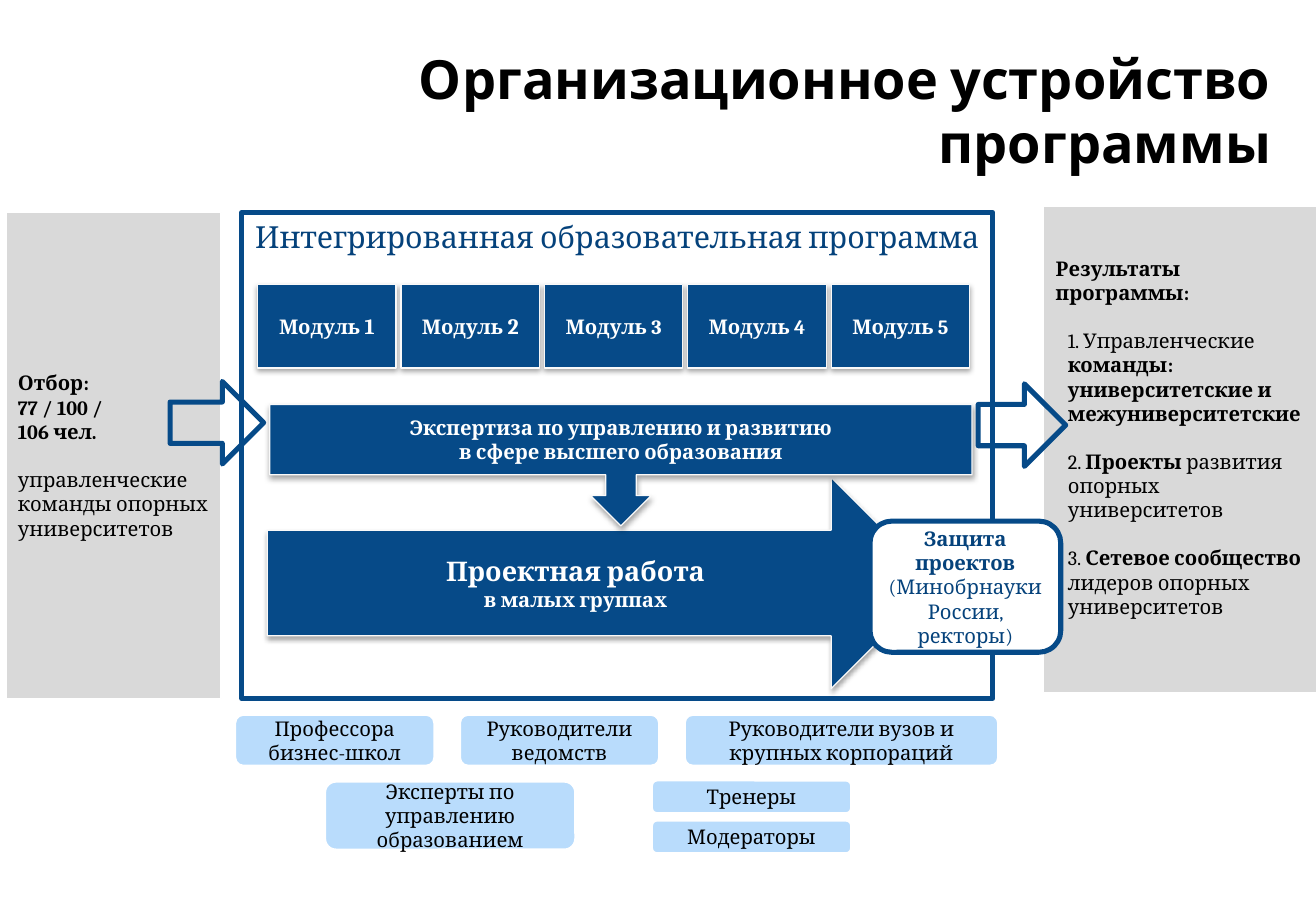
from dataclasses import dataclass

from lxml import etree
from pptx import Presentation
from pptx import util as u
from pptx.dml import color
from pptx.enum import shapes, text
from pptx.oxml import ns

PX = 9144


@dataclass(frozen=True)
class Theme:
    navy: str = "064A88"
    ink: str = "05427B"
    black: str = "000000"
    white: str = "FFFFFF"
    edge: str = "F9F9F9"
    grey: str = "D9D9D9"
    sky: str = "B9DCFC"
    heading_font: str = "Cabin"
    body_font: str = "Cambria"
    title: int = 32
    label: int = 18
    project: int = 16
    digit: int = 13
    body: int = 12
    gap: int = 14


THEME = Theme()
KIND = shapes.MSO_SHAPE
LEFT, CENTER, RIGHT, JUSTIFY = (
    text.PP_ALIGN.LEFT, text.PP_ALIGN.CENTER, text.PP_ALIGN.RIGHT, text.PP_ALIGN.JUSTIFY)
MIDDLE, TOP = text.MSO_ANCHOR.MIDDLE, text.MSO_ANCHOR.TOP

PAGE = (1083, 750)
TITLE = "Организационное устройство программы"
PROGRAM = "Интегрированная образовательная программа"
SELECTION = [
    {"align": JUSTIFY, "spans": [("Отбор:", True)]},
    {"spans": [("77 / 100 /", True)]},
    {"spans": [("106 чел.", True)]},
    {"gap": True, "spans": [("управленческие команды опорных университетов", False)]},
]
RESULTS = [
    {"align": JUSTIFY, "spans": [("Результаты программы:", True)]},
    {"gap": True, "margin": 10, "spans": [
        ("1. Управленческие ", False), ("команды: университетские и межуниверситетские", True)]},
    {"gap": True, "margin": 10, "spans": [
        ("2. ", False), ("Проекты", True), (" развития", False)]},
    {"margin": 10, "spans": [("опорных университетов", False)]},
    {"gap": True, "margin": 10, "spans": [
        ("3. ", False), ("Сетевое сообщество ", True), ("лидеров опорных университетов", False)]},
]
MODULE_DIGIT_SIZES = [THEME.digit, THEME.digit, THEME.body, THEME.body, THEME.body]
PROJECT = [
    {"align": CENTER, "margin": 19, "hang": 19, "spans": [("Проектная работа", True, THEME.project)]},
    {"align": CENTER, "margin": 19, "hang": 19, "spans": [("в малых группах", True)]},
]
EXPERTISE = [
    {"align": CENTER, "margin": 19, "hang": 19, "spans": [(line, True)]}
    for line in ("Экспертиза по управлению и развитию", "в сфере высшего образования")
]
DEFENCE = [{"align": CENTER, "spans": [
    ("Защита проектов ", True), ("(Минобрнауки России, ректоры)", False)]}]
PEOPLE = [
    ("Профессора бизнес-школ", (193, 588, 165, 43)),
    ("Эксперты по управлению образованием", (267, 643, 207, 57)),
    ("Руководители ведомств", (378, 588, 165, 43)),
    ("Руководители вузов и крупных корпораций", (563, 588, 259, 43)),
    ("Тренеры", (536, 642, 165, 28)),
    ("Модераторы", (536, 675, 165, 28)),
]

PANEL = {"fill": THEME.grey, "line": THEME.white, "width": 0.75}
BLOCK = {"fill": THEME.navy, "line": THEME.edge, "width": 0.75, "shadow": True,
         "color": THEME.white, "insets": (4, 5, 4, 5)}
OUTLINE = {"line": THEME.navy, "width": 3, "color": THEME.ink}
PERSON = {"fill": THEME.sky, "line": THEME.white, "width": 2}


def rgb(value):
    return color.RGBColor.from_string(value)


def assign(target, values):
    for name, value in values.items():
        setattr(target, name, value)


def write(box, paras, look):
    frame = box.text_frame
    left, top, right, bottom = (side * PX for side in look.get("insets", (10, 5, 10, 5)))
    assign(frame, {
        "word_wrap": look.get("wrap", True), "vertical_anchor": look.get("anchor", MIDDLE),
        "margin_left": left, "margin_top": top, "margin_right": right, "margin_bottom": bottom})
    for index, item in enumerate(paras):
        para = frame.paragraphs[0] if index == 0 else frame.add_paragraph()
        para.alignment = item.get("align", LEFT)
        if item.get("gap"):
            para.space_before = u.Pt(THEME.gap)
        if "margin" in item:
            props = para._p.get_or_add_pPr()
            props.set("marL", str(item["margin"] * PX))
            props.set("indent", str(-item.get("hang", 0) * PX))
        for words, bold, *size in item["spans"]:
            span = para.add_run()
            span.text = words
            points = size[0] if size else look.get("size", THEME.body)
            assign(span.font, {"name": look.get("font", THEME.body_font),
                               "size": u.Pt(points), "bold": bold})
            span.font.color.rgb = rgb(look.get("color", THEME.black))


def cast_shadow(shape):
    effects = shape._element.spPr.find(ns.qn("a:effectLst"))
    shadow = etree.SubElement(effects, ns.qn("a:outerShdw"), blurRad="40000",
                              dist="23000", dir="5400000", rotWithShape="0")
    tint = etree.SubElement(shadow, ns.qn("a:srgbClr"), val=THEME.black)
    etree.SubElement(tint, ns.qn("a:alpha"), val="35000")


def draw(page, kind, area, look, paras=(), adjustments=()):
    shape = page.shapes.add_shape(kind, *(side * PX for side in area))
    shape.shadow.inherit = False
    if look.get("shadow"):
        cast_shadow(shape)
    if "fill" in look:
        shape.fill.solid()
        shape.fill.fore_color.rgb = rgb(look["fill"])
    else:
        shape.fill.background()
    shape.line.color.rgb = rgb(look["line"])
    shape.line.width = u.Pt(look["width"])
    for index, value in enumerate(adjustments):
        shape.adjustments[index] = value
    write(shape, paras, look)


def centered(words):
    return [{"align": CENTER, "spans": [(words, False)]}]


def main():
    deck = Presentation()
    assign(deck, {"slide_width": PAGE[0] * PX, "slide_height": PAGE[1] * PX})
    page = deck.slides.add_slide(deck.slide_layouts[6])

    heading = page.shapes.add_textbox(*(side * PX for side in (296, 43, 760, 95)))
    write(heading, [{"align": RIGHT, "spans": [(TITLE, True)]}],
          {"font": THEME.heading_font, "size": THEME.title})

    draw(page, KIND.RECTANGLE, (5, 175, 177, 400), PANEL, SELECTION)
    draw(page, KIND.RECTANGLE, (199, 175, 618, 400),
         {**OUTLINE, "size": THEME.label, "anchor": TOP, "wrap": False}, centered(PROGRAM))
    for index, size in enumerate(MODULE_DIGIT_SIZES):
        name = [{"align": CENTER, "spans": [("Модуль ", True), (str(index + 1), True, size)]}]
        draw(page, KIND.RECTANGLE, (212 + 118 * index, 234, 114, 69), BLOCK, name)
    draw(page, KIND.RIGHT_ARROW, (220, 393, 551, 174), BLOCK, PROJECT)
    draw(page, KIND.RIGHT_ARROW, (140, 314, 77, 68), OUTLINE)
    draw(page, KIND.RECTANGLE, (859, 170, 226, 400),
         {**PANEL, "insets": (10, 5, 10, 25)}, RESULTS)
    for role, area in PEOPLE:
        draw(page, KIND.ROUNDED_RECTANGLE, area, PERSON, centered(role))
    draw(page, KIND.DOWN_ARROW_CALLOUT, (222, 333, 578, 100), BLOCK, EXPERTISE,
         (0.25, 0.25, 0.25, 0.58))
    draw(page, KIND.RIGHT_ARROW, (805, 316, 72, 68), OUTLINE)
    draw(page, KIND.ROUNDED_RECTANGLE, (716, 429, 157, 108),
         {**OUTLINE, "fill": THEME.white}, DEFENCE)

    deck.save("out.pptx")


if __name__ == "__main__":
    main()
